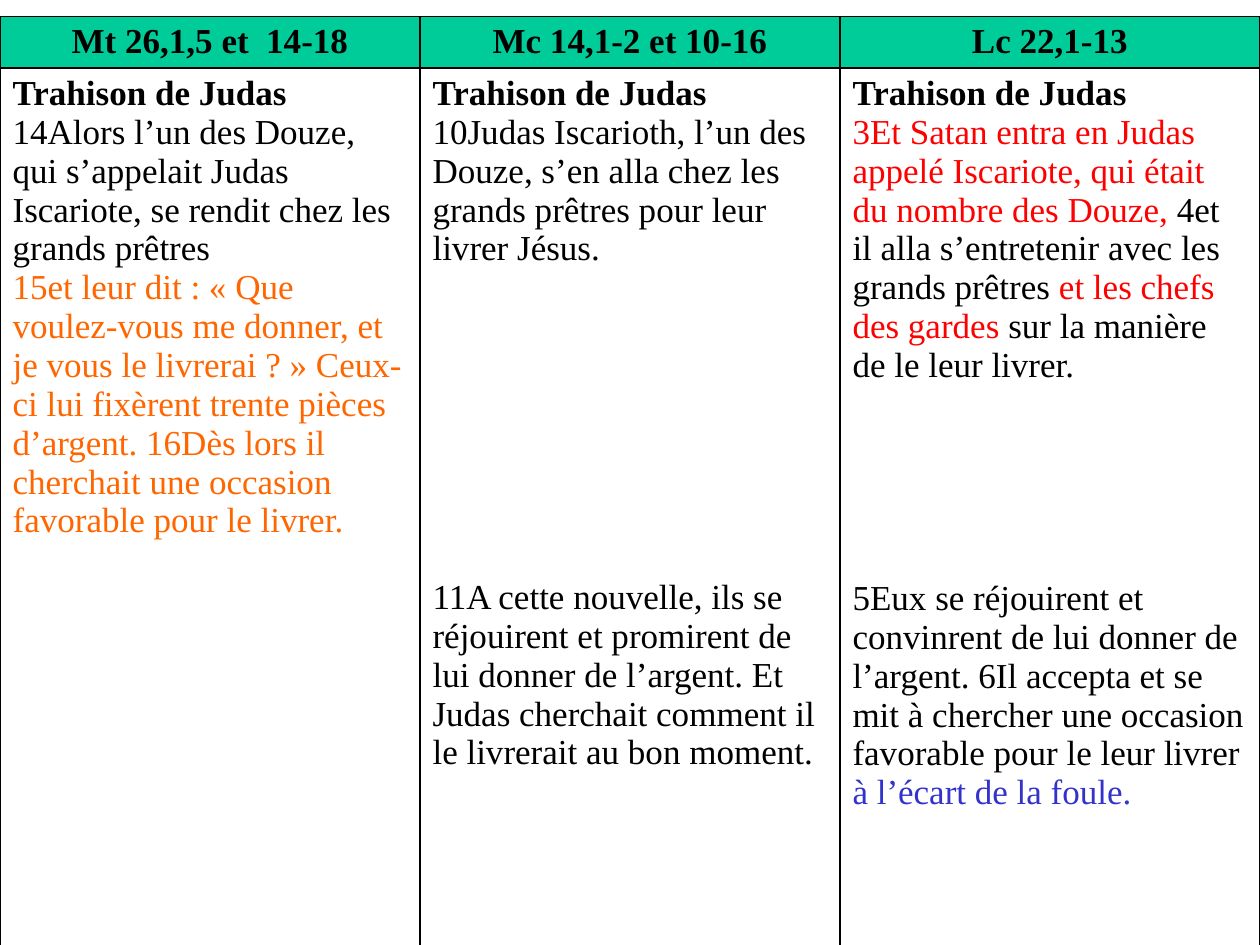
from lxml import etree
from pptx import Presentation
from pptx import util as u
from pptx.dml.color import RGBColor
from pptx.enum import text
from pptx.oxml import ns

HUES = {"black": "000000", "white": "FFFFFF", "green": "00CC99",
        "orange": "FF6600", "red": "FF0000", "blue": "3333CC"}
FONT = {"name": "Times New Roman", "size": u.Pt(20)}
LINE = 22.15  # height of one text line in points

HEADS = ["Mt 26,1,5 et  14-18", "Mc 14,1-2 et 10-16", "Lc 22,1-13"]
TITLE = "Trahison de Judas"

# Each verse: lines of space before it, then its (words, colour) runs
VERSES = [
    [(0, [("14Alors l’un des Douze, qui s’appelait Judas Iscariote, "
           "se rendit chez les grands prêtres", "black")]),
     (0, [("15et leur dit : « Que voulez-vous me donner, et je vous le "
           "livrerai ? » Ceux-ci lui fixèrent trente pièces d’argent. "
           "16Dès lors il cherchait une occasion favorable pour le livrer.",
           "orange")])],
    [(0, [("10Judas Iscarioth, l’un des Douze, s’en alla chez les grands "
           "prêtres pour leur livrer Jésus.", "black")]),
     (8, [("11A cette nouvelle, ils se réjouirent et promirent de lui donner "
           "de l’argent. Et Judas cherchait comment il le livrerait au bon "
           "moment.", "black")])],
    [(0, [("3Et Satan entra en Judas appelé Iscariote, qui était du nombre "
           "des Douze,", "red"),
          (" 4et il alla s’entretenir avec les grands prêtres ", "black"),
          ("et les chefs des gardes", "red"),
          (" sur la manière de le leur livrer.", "black")]),
     (5, [("5Eux se réjouirent et convinrent de lui donner de l’argent. "
           "6Il accepta et se mit à chercher une occasion favorable pour le "
           "leur livrer ", "black"),
          ("à l’écart de la foule.", "blue")])],
]


def add_run(para, words, hue="black", bold=False):
    run = para.add_run()
    run.text = words
    for key, value in {**FONT, "bold": bold}.items():
        setattr(run.font, key, value)
    run.font.color.rgb = RGBColor.from_string(HUES[hue])


def add_edges(cell):
    props = cell._tc.get_or_add_tcPr()
    for side in ("lnL", "lnR", "lnT", "lnB"):
        edge = etree.SubElement(props, ns.qn("a:" + side), w=str(u.Pt(1)))
        fill = etree.SubElement(edge, ns.qn("a:solidFill"))
        etree.SubElement(fill, ns.qn("a:srgbClr"), val=HUES["black"])


def style_cell(cell, hue):
    add_edges(cell)
    cell.fill.solid()
    cell.fill.fore_color.rgb = RGBColor.from_string(HUES[hue])


def fill_head(cell, words):
    style_cell(cell, "green")
    para = cell.text_frame.paragraphs[0]
    para.alignment = text.PP_ALIGN.CENTER
    add_run(para, words, bold=True)


def fill_body(cell, verses):
    style_cell(cell, "white")
    frame = cell.text_frame
    add_run(frame.paragraphs[0], TITLE, bold=True)
    for gap, runs in verses:
        para = frame.add_paragraph()
        if gap:
            para.space_before = u.Pt(round(gap * LINE))
        for words, hue in runs:
            add_run(para, words, hue)


def add_grid(slide):
    grid = slide.shapes.add_table(
        2, len(HEADS), u.Inches(0), u.Inches(0.13),
        u.Inches(10), u.Inches(7.62)).table
    for row, high in zip(grid.rows, (0.41, 7.21)):
        row.height = u.Inches(high)
    for col, (head, verses) in enumerate(zip(HEADS, VERSES)):
        fill_head(grid.cell(0, col), head)
        fill_body(grid.cell(1, col), verses)


def main():
    deck = Presentation()
    deck.slide_width, deck.slide_height = u.Inches(10), u.Inches(7.5)
    # Blank layout: the slide holds only the table of the three gospels
    add_grid(deck.slides.add_slide(deck.slide_layouts[6]))
    deck.save("out.pptx")


if __name__ == "__main__":
    main()
